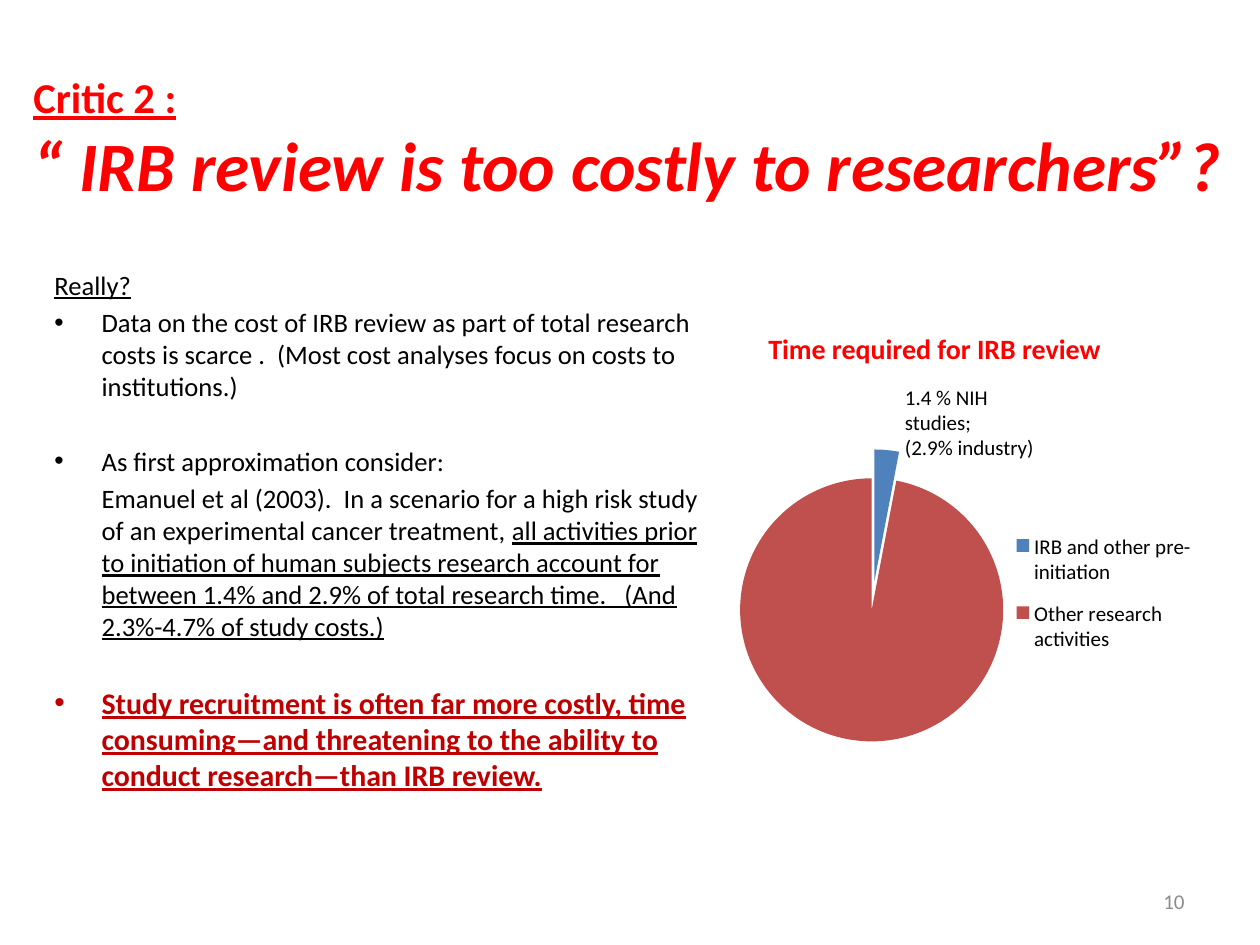
from dataclasses import dataclass

from lxml.etree import SubElement
from pptx import Presentation
from pptx.chart.data import CategoryChartData
from pptx.dml.color import RGBColor
from pptx.enum.chart import XL_CHART_TYPE as ChartType, XL_LEGEND_POSITION as LegendPosition
from pptx.enum.text import MSO_ANCHOR as Anchor, PP_ALIGN as Align
from pptx.oxml import parse_xml
from pptx.oxml.ns import nsdecls, qn
from pptx.util import Pt


@dataclass(frozen=True)
class Theme:
    font: str = "Calibri"
    black: str = "000000"
    red: str = "FF0000"
    dark_red: str = "C00000"
    grey: str = "8C8C8C"
    slices: tuple[str, ...] = ("4F81BD", "C0504D")
    kicker: float = 24.3
    title: float = 39.6
    body: float = 15.2
    emphasis: float = 17.1
    heading: float = 16
    small: float = 12


THEME = Theme()
HANGING = 27


@dataclass(frozen=True)
class Box:
    left: float
    top: float
    width: float
    height: float

    def lengths(self) -> tuple[Pt, ...]:
        return tuple(Pt(value) for value in (self.left, self.top, self.width, self.height))


@dataclass(frozen=True)
class Span:
    text: str
    size: float = THEME.body
    color: str = THEME.black
    bold: bool = False
    italic: bool = False
    underline: bool = False


@dataclass(frozen=True)
class Block:
    spans: tuple[Span, ...]
    before: float = 0
    indent: float = 0
    bullet: bool = False
    align: Align = Align.LEFT


def format_font(font, span: Span) -> None:
    font.name = THEME.font
    font.size = Pt(span.size)
    font.bold = span.bold
    font.italic = span.italic
    font.underline = span.underline
    font.color.rgb = RGBColor.from_string(span.color)


def fill_paragraph(paragraph, block: Block) -> None:
    paragraph.alignment = block.align
    paragraph.space_before = Pt(block.before)
    properties = paragraph._p.get_or_add_pPr()
    properties.set("marL", str(Pt(block.indent)))
    properties.set("indent", str(Pt(-block.indent if block.bullet else 0)))
    if block.bullet:
        SubElement(properties, qn("a:buFont")).set("typeface", "Arial")
        SubElement(properties, qn("a:buChar")).set("char", "•")
    for span in block.spans:
        run = paragraph.add_run()
        run.text = span.text
        format_font(run.font, span)


def add_text(slide, box: Box, blocks: list[Block], anchor: Anchor = Anchor.TOP) -> None:
    frame = slide.shapes.add_textbox(*box.lengths()).text_frame
    frame.word_wrap = True
    frame.vertical_anchor = anchor
    for index, block in enumerate(blocks):
        paragraph = frame.add_paragraph() if index else frame.paragraphs[0]
        fill_paragraph(paragraph, block)


def set_layout(parent, box: Box, inner: bool = False):
    target = '<c:layoutTarget val="inner"/>' if inner else ""
    values = {"x": box.left, "y": box.top, "w": box.width, "h": box.height}
    modes = "".join(f'<c:{axis}Mode val="edge"/>' for axis in "xy")
    sizes = "".join(f'<c:{name} val="{value}"/>' for name, value in values.items())
    layout = parse_xml(
        f'<c:layout {nsdecls("c")}><c:manualLayout>{target}{modes}{sizes}'
        "</c:manualLayout></c:layout>"
    )
    for existing in parent.findall(qn("c:layout")):
        parent.remove(existing)
    return layout


def add_time_chart(slide, box: Box) -> None:
    data = CategoryChartData()
    data.categories = ["IRB and other pre-initiation", "Other research activities"]
    data.add_series("Series 1", (3, 97))
    chart = slide.shapes.add_chart(ChartType.PIE, *box.lengths(), data).chart
    chart.has_title = False
    format_font(chart.font, Span("", 18))
    chart.has_legend = True
    legend = chart.legend
    legend.position = LegendPosition.RIGHT
    legend.include_in_layout = False
    format_font(legend.font, Span("", THEME.small))

    plot = chart.plots[0]
    plot.vary_by_categories = True
    series = plot.series[0]
    for index, color in enumerate(THEME.slices):
        fill = series.points[index].format.fill
        fill.solid()
        fill.fore_color.rgb = RGBColor.from_string(color)
    explosion = parse_xml(f'<c:explosion {nsdecls("c")} val="11"/>')
    series._element.find(qn("c:dPt")).addprevious(explosion)

    plot_area = chart._chartSpace.chart.plotArea
    plot_area.insert(0, set_layout(plot_area, Box(0.12, 0.17, 0.535, 0.78), inner=True))
    legend_element = legend._element
    layout = set_layout(legend_element, Box(0.64, 0.36, 0.34, 0.39))
    legend_element.find(qn("c:legendPos")).addnext(layout)


def main() -> None:
    presentation = Presentation()
    presentation.slide_width, presentation.slide_height = Pt(720), Pt(540)
    slide = presentation.slides.add_slide(presentation.slide_layouts[6])

    add_text(slide, Box(12, 24, 708, 110), [
        Block((Span("Critic 2 :", THEME.kicker, THEME.red, bold=True, underline=True),)),
        Block((Span("“ IRB review is too costly to researchers”?", THEME.title, THEME.red,
                    bold=True, italic=True),)),
    ], Anchor.MIDDLE)

    line_gap, section_gap = 3.2, 24.5
    add_text(slide, Box(24, 150, 390, 356), [
        Block((Span("Really?", underline=True),), line_gap),
        Block((Span("Data on the cost of IRB review as part of total research costs is scarce .  "
                    "(Most cost analyses focus on costs to institutions.)"),),
              line_gap, HANGING, True),
        Block((Span("As first approximation consider:"),), section_gap, HANGING, True),
        Block((Span("Emanuel et al (2003).  In a scenario for a high risk study of an "
                    "experimental cancer treatment, "),
               Span("all activities prior to initiation of human subjects research account for "
                    "between 1.4% and 2.9% of total research time.   (And 2.3%-4.7% of study "
                    "costs.)", underline=True)), line_gap, HANGING),
        Block((Span("Study recruitment is often far more costly, time consuming—and threatening "
                    "to the ability to conduct research—than IRB review.", THEME.emphasis,
                    THEME.dark_red, bold=True, underline=True),), section_gap, HANGING, True),
    ])

    add_text(slide, Box(516, 500.5, 168, 28.75),
             [Block((Span("10", THEME.small, THEME.grey),), align=Align.RIGHT)], Anchor.MIDDLE)
    add_time_chart(slide, Box(378, 216, 312, 222))
    add_text(slide, Box(510, 216, 90, 51), [
        Block((Span(text, THEME.small),)) for text in ("1.4 % NIH studies;", "(2.9% industry)")
    ])
    add_text(slide, Box(432, 186, 222, 26.5), [
        Block((Span("Time required for IRB review", THEME.heading, THEME.red, bold=True),)),
    ])
    presentation.save("out.pptx")


if __name__ == "__main__":
    main()
